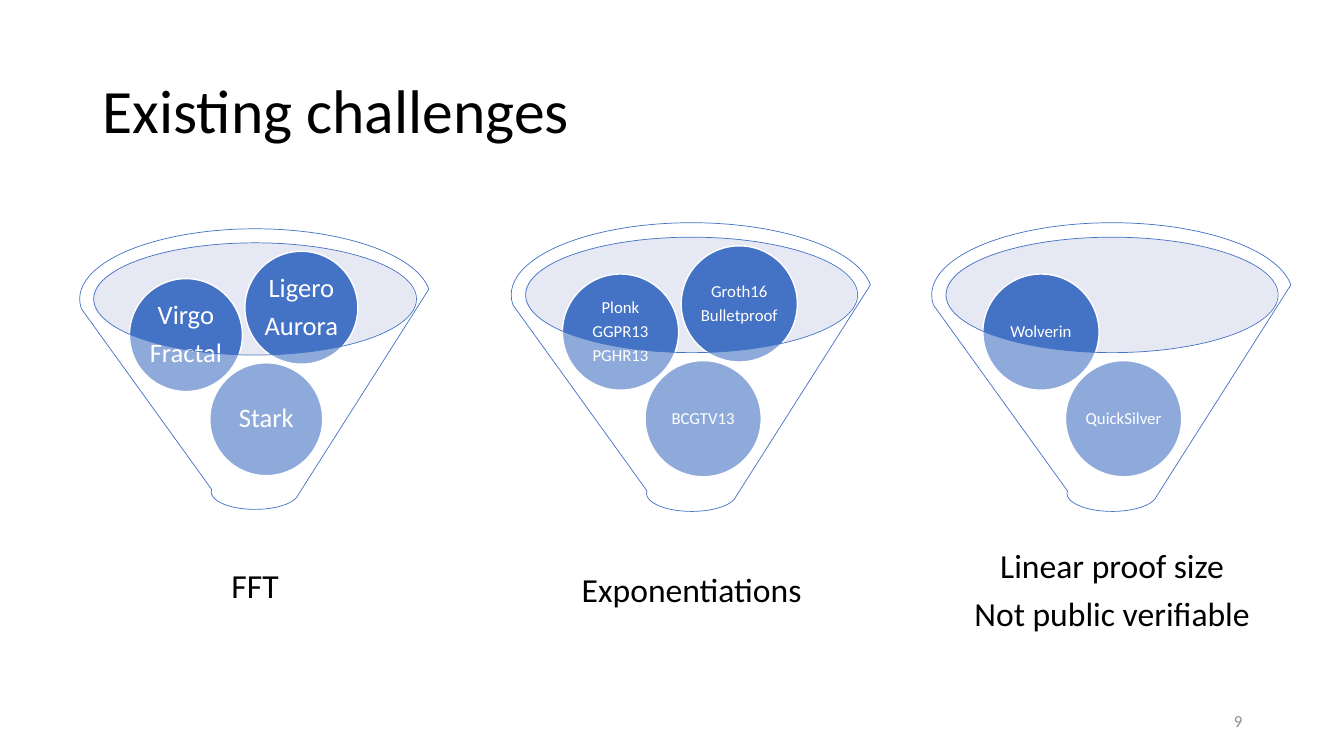
from dataclasses import dataclass

from lxml import etree
from pptx import Presentation
from pptx.dml.color import RGBColor
from pptx.enum.shapes import MSO_SHAPE
from pptx.enum.text import MSO_ANCHOR, PP_ALIGN
from pptx.oxml.ns import qn
from pptx.util import Inches, Pt

OVAL, FUNNEL = MSO_SHAPE.OVAL, MSO_SHAPE.FUNNEL
MIDDLE = MSO_ANCHOR.MIDDLE
LEFT, CENTER, RIGHT = PP_ALIGN.LEFT, PP_ALIGN.CENTER, PP_ALIGN.RIGHT


@dataclass(frozen=True)
class Theme:
    """Colours, font and type sizes of the slide."""
    font: str = "Calibri"
    ink: str = "000000"
    white: str = "FFFFFF"
    blue: str = "4472C4"
    pale: str = "C1C9E4"
    gray: str = "8C8C8C"
    title: int = 44
    label: int = 24
    large: int = 19
    small: int = 12
    veil: int = 40


THEME = Theme()
SPOTS = [(0.371, 0.382), (0.142, 0.142), (0.471, 0.064)]
FUNNELS = [
    ((0.79, 2.27, 3.48), 2.98, THEME.large, ["FFT"],
     [["Stark"], ["Virgo", "Fractal"], ["Ligero", "Aurora"]]),
    ((5.07, 2.21, 3.58), 3.07, THEME.small, ["Exponentiations"],
     [["BCGTV13"], ["Plonk", "GGPR13", "PGHR13"], ["Groth16", "Bulletproof"]]),
    ((9.24, 2.21, 3.58), 4.21, THEME.small,
     ["Linear proof size", "Not public verifiable"],
     [["QuickSilver"], ["Wolverin"]]),
]


def write(shape, lines, size, color, align, pad, line=0.9, after=0.35):
    """Fill a shape with one paragraph per line of text."""
    frame = shape.text_frame
    frame.vertical_anchor = MIDDLE
    frame.margin_left = frame.margin_right = Inches(pad[0])
    frame.margin_top = frame.margin_bottom = Inches(pad[1])
    for i, text in enumerate(lines):
        para = frame.add_paragraph() if i else frame.paragraphs[0]
        para.alignment = align
        para.line_spacing = line
        para.space_after = Pt(round(size * after, 1))
        run = para.add_run()
        run.text = text
        run.font.name = THEME.font
        run.font.size = Pt(size)
        run.font.color.rgb = RGBColor.from_string(color)


def label(slide, box, lines, size, color, align, pad=(0.1, 0.05), **gaps):
    """Place a wrapped text box."""
    shape = slide.shapes.add_textbox(*map(Inches, box))
    shape.text_frame.word_wrap = True
    write(shape, lines, size, color, align, pad, **gaps)


def draw(slide, kind, box, fill, line=None, width=1, alpha=None):
    """Place a preset shape with a flat fill and optional outline."""
    shape = slide.shapes.add_shape(kind, *map(Inches, box))
    shape.shadow.inherit = False
    shape.fill.solid()
    shape.fill.fore_color.rgb = RGBColor.from_string(fill)
    if alpha:
        tint = shape.fill._xPr.find(".//" + qn("a:srgbClr"))
        etree.SubElement(tint, qn("a:alpha"), val=str(alpha * 1000))
    if line:
        shape.line.color.rgb = RGBColor.from_string(line)
        shape.line.width = Pt(width)
    else:
        shape.line.fill.background()
    return shape


def funnel(slide, box, span, size, name, balls):
    """Draw a funnel of balls with its caption, scaled to the box width."""
    x, y, w = box
    rim = (x + 0.037 * w, y + 0.04 * w, 0.92 * w, 0.32 * w)
    draw(slide, OVAL, rim, THEME.pale, alpha=THEME.veil)
    base = (x + (w - span) / 2, y + 0.914 * w, span, 0.215 * w)
    label(slide, base, name, THEME.label, THEME.ink, CENTER, (0.19, 0.19))
    side = 0.322 * w
    for (dx, dy), lines in zip(SPOTS, balls):
        spot = (x + dx * w, y + dy * w, side, side)
        ball = draw(slide, OVAL, spot, THEME.blue, THEME.white)
        ball.text_frame.word_wrap = False
        write(ball, lines, size, THEME.white, CENTER, (0.02, 0.02))
    draw(slide, FUNNEL, (x, y, w, 0.8 * w), THEME.white, THEME.blue, 0.5,
         THEME.veil)


def main():
    """Build and save the slide."""
    deck = Presentation()
    deck.slide_width, deck.slide_height = Inches(13.33), Inches(7.5)
    slide = deck.slides.add_slide(deck.slide_layouts[6])
    label(slide, (0.92, 0.4, 11.5, 1.45), ["Existing challenges"],
          THEME.title, THEME.ink, LEFT, after=0)
    for group in FUNNELS:
        funnel(slide, *group)
    label(slide, (9.42, 6.95, 3, 0.4), ["9"], THEME.small, THEME.gray, RIGHT,
          line=1, after=0)
    deck.save("out.pptx")


if __name__ == "__main__":
    main()
